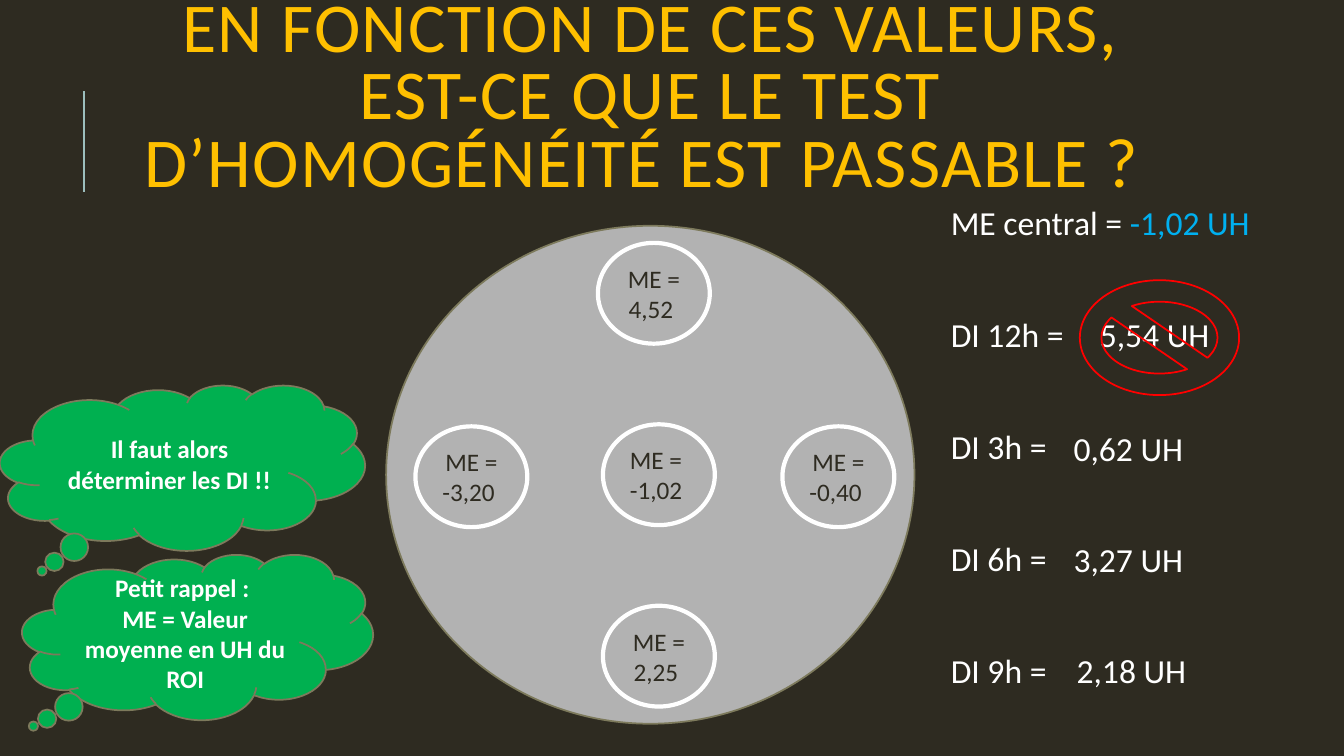
"""Build the slide about the homogeneity test and its ROI measurements."""
from dataclasses import dataclass

from lxml.etree import SubElement
from pptx import Presentation
from pptx.dml.color import RGBColor
from pptx.enum.shapes import MSO_CONNECTOR, MSO_SHAPE
from pptx.enum.text import MSO_ANCHOR, PP_ALIGN
from pptx.oxml.ns import qn
from pptx.shapes.autoshape import Shape
from pptx.slide import Slide
from pptx.text.text import TextFrame
from pptx.util import Inches, Pt

FONT = "Calibri"
DARK, WHITE, GOLD, BLUE = "2E2B21", "FFFFFF", "FFC000", "00B0F0"
GREY, GREEN, OLIVE, RED, TEAL = "B2B2B2", "00B050", "7D7A5C", "FF0000", "9CBEBD"


@dataclass(frozen=True)
class Box:
    left: float
    top: float
    width: float
    height: float

    def lengths(self) -> tuple[int, int, int, int]:
        return Inches(self.left), Inches(self.top), Inches(self.width), Inches(self.height)


@dataclass(frozen=True)
class Region:
    left: float
    top: float
    text: str


@dataclass(frozen=True)
class Cloud:
    box: Box
    tail: tuple[float, float]
    text: str


@dataclass(frozen=True)
class Difference:
    left: float
    top: float
    text: str


REGIONS = [
    Region(5.93, 2.41, "ME = 4,52 "),
    Region(5.98, 4.21, "ME = \n-1,02 "),
    Region(5.98, 6.01, "ME = 2,25 "),
    Region(4.12, 4.23, "ME =\n-3,20 "),
    Region(7.76, 4.23, "ME = -0,40 "),
]
CLOUDS = [
    Cloud(Box(0.22, 5.5, 3.48, 1.64), (-0.468, 0.539),
          "Petit rappel : \nME = Valeur moyenne en UH du ROI"),
    Cloud(Box(0, 3.82, 3.62, 1.64), (-0.385, 0.625),
          "Il faut alors déterminer les DI !!"),
]
LABELS = ["ME central = ", "DI 12h =", "DI 3h =", "DI 6h =", "DI 9h ="]
DIFFERENCES = [
    Difference(10.81, 3.07, "5,54 UH"),
    Difference(10.55, 4.2, "0,62 UH"),
    Difference(10.55, 5.3, "3,27 UH"),
    Difference(10.58, 6.4, "2,18 UH"),
]


def color(value: str) -> RGBColor:
    return RGBColor.from_string(value)


def write(frame: TextFrame, text: str, size: float, font_color: str,
          align: PP_ALIGN = PP_ALIGN.LEFT, bold: bool = False) -> None:
    frame.text = text
    frame.word_wrap = True
    for paragraph in frame.paragraphs:
        paragraph.alignment = align
        for run in paragraph.runs:
            run.font.name = FONT
            run.font.size = Pt(size)
            run.font.bold = bold
            run.font.color.rgb = color(font_color)


def add_outline(slide: Slide, kind: MSO_SHAPE, box: Box, line: str,
                width: float, fill: str | None = None) -> Shape:
    shape = slide.shapes.add_shape(kind, *box.lengths())
    shape.shadow.inherit = False
    shape.line.color.rgb = color(line)
    shape.line.width = Pt(width)
    if fill is None:
        shape.fill.background()
    else:
        shape.fill.solid()
        shape.fill.fore_color.rgb = color(fill)
    return shape


def add_accent_line(slide: Slide) -> None:
    line = slide.shapes.add_connector(
        MSO_CONNECTOR.STRAIGHT, Inches(0.83), Inches(1.9), Inches(0.83), Inches(0.9))
    line.line.color.rgb = color(TEAL)
    line.line.width = Pt(1.5)
    SubElement(line._element.spPr, qn("a:effectLst"))


def add_title(slide: Slide) -> None:
    frame = slide.shapes.add_textbox(*Box(1.14, 0.17, 10.63, 1.64).lengths()).text_frame
    write(frame, "EN FONCTION DE CES VALEURS, EST-CE QUE LE TEST "
                 "D’HOMOGÉNÉITÉ EST PASSABLE ? ", 50, GOLD, PP_ALIGN.CENTER)
    frame.vertical_anchor = MSO_ANCHOR.MIDDLE
    paragraph = frame.paragraphs[0]
    paragraph.line_spacing = 0.8
    paragraph.runs[0]._r.get_or_add_rPr().set("spc", "100")


def add_region(slide: Slide, region: Region) -> None:
    shape = add_outline(slide, MSO_SHAPE.OVAL, Box(region.left, region.top, 1.11, 1), WHITE, 3)
    write(shape.text_frame, region.text, 18, DARK, PP_ALIGN.CENTER)
    shape.text_frame.vertical_anchor = MSO_ANCHOR.MIDDLE


def add_cloud(slide: Slide, cloud: Cloud) -> None:
    shape = add_outline(slide, MSO_SHAPE.CLOUD_CALLOUT, cloud.box, OLIVE, 1.25, GREEN)
    for index, offset in enumerate(cloud.tail):
        shape.adjustments[index] = offset
    write(shape.text_frame, cloud.text, 18, WHITE, PP_ALIGN.CENTER, bold=True)
    shape.text_frame.vertical_anchor = MSO_ANCHOR.MIDDLE


def add_labels(slide: Slide) -> None:
    frame = slide.shapes.add_textbox(*Box(9.28, 2, 3.72, 5.14).lengths()).text_frame
    write(frame, "\n".join(LABELS), 24, WHITE)
    frame.margin_left = Inches(0.15)
    frame.margin_top = frame.margin_right = frame.margin_bottom = Inches(0.05)
    for paragraph in frame.paragraphs:
        paragraph.line_spacing = 0.9
        paragraph.space_after = Pt(54)
    central = frame.paragraphs[0].add_run()
    central.text = "-1,02 UH"
    central.font.name = FONT
    central.font.size = Pt(24)
    central.font.color.rgb = color(BLUE)


def add_difference(slide: Slide, difference: Difference) -> None:
    box = Box(difference.left, difference.top, 1.7, 0.5)
    textbox = slide.shapes.add_textbox(*box.lengths())
    write(textbox.text_frame, difference.text, 24, WHITE)


def main() -> None:
    presentation = Presentation()
    presentation.slide_width = Inches(13.33)
    presentation.slide_height = Inches(7.5)
    slide = presentation.slides.add_slide(presentation.slide_layouts[6])
    slide.background.fill.solid()
    slide.background.fill.fore_color.rgb = color(DARK)

    add_accent_line(slide)
    add_title(slide)
    add_outline(slide, MSO_SHAPE.OVAL, Box(3.83, 2.24, 5.24, 4.94), OLIVE, 1.25, GREY)
    for region in REGIONS:
        add_region(slide, region)
    for cloud in CLOUDS:
        add_cloud(slide, cloud)
    add_labels(slide)
    for difference in DIFFERENCES:
        add_difference(slide, difference)
    add_outline(slide, MSO_SHAPE.NO_SYMBOL, Box(10.71, 2.78, 1.58, 1.14), RED, 1.25)

    presentation.save("out.pptx")


if __name__ == "__main__":
    main()
